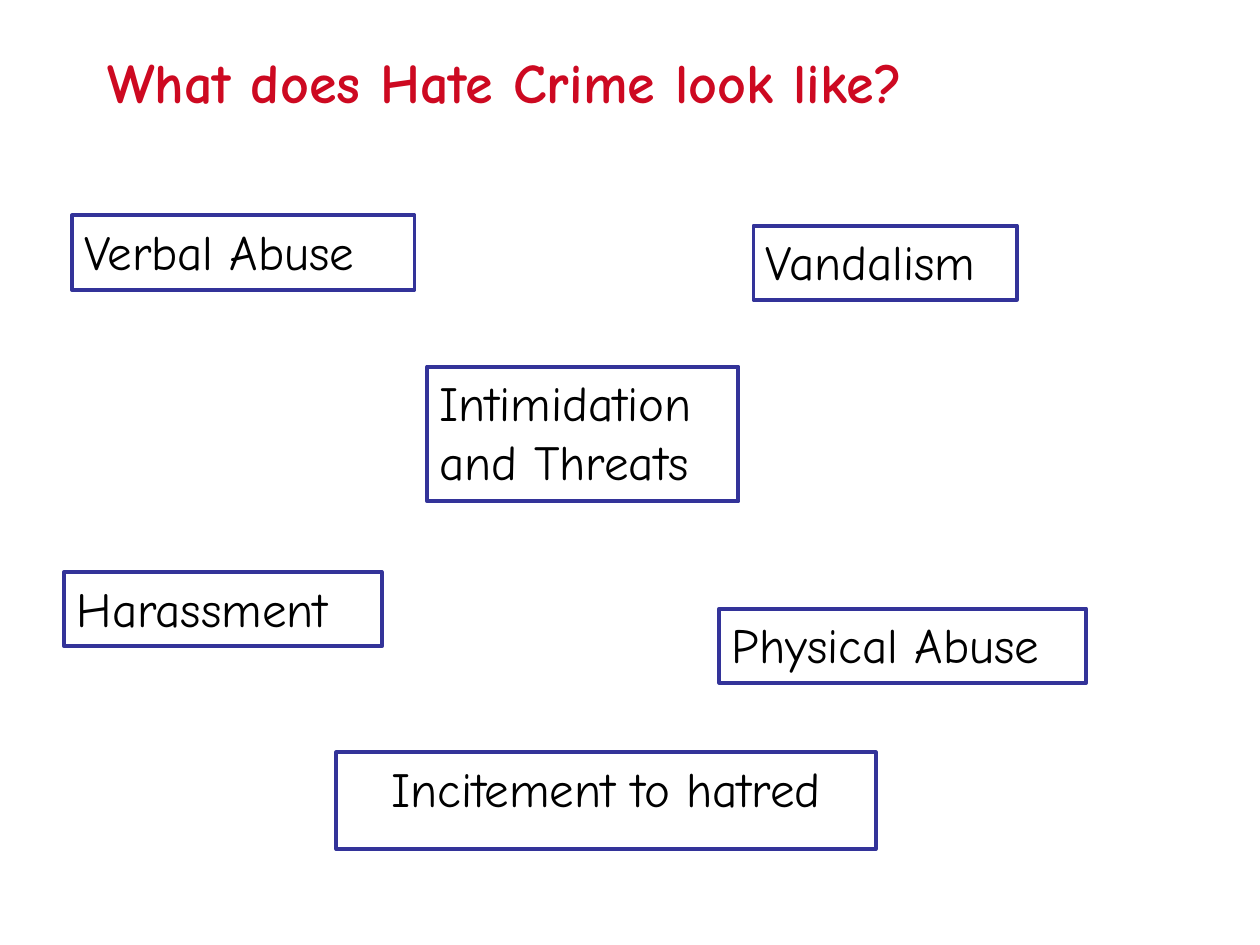
"""Build a slide showing six forms of hate crime in outlined boxes."""
from pptx import Presentation
from pptx.dml.color import RGBColor
from pptx.enum.shapes import MSO_SHAPE as Shape
from pptx.enum.text import MSO_ANCHOR as Anchor, PP_ALIGN as Align
from pptx.util import Inches, Pt

RED = RGBColor(0xCD, 0x09, 0x21)
BLUE = RGBColor(0x33, 0x33, 0x99)
BLACK = RGBColor(0, 0, 0)
COLUMN = ROW = Inches(1)
TITLE_FONT = {"name": "Comic Neue", "size": Pt(32), "bold": True}
BOX_FONT = {"name": "Comic Neue", "size": Pt(28), "bold": False}
LINE_HEIGHT = 0.59


def place(shape, left, top, width, height):
    shape.left, shape.top = int(left * COLUMN), int(top * ROW)
    shape.width, shape.height = int(width * COLUMN), int(height * ROW)


def write(shape, text, font_values, color, align):
    frame = shape.text_frame
    frame.word_wrap = True
    frame.vertical_anchor = Anchor.TOP
    paragraph = frame.paragraphs[0]
    paragraph.alignment = align
    run = paragraph.add_run()
    run.text = text
    for name, value in font_values.items():
        setattr(run.font, name, value)
    run.font.color.rgb = color


presentation = Presentation()
presentation.slide_width = 10 * COLUMN
presentation.slide_height = int(7.5 * ROW)
slide = presentation.slides.add_slide(presentation.slide_layouts[5])

title = slide.shapes.title
place(title, 0.75, 0.33, 8.92, 1.25)
write(title, "What does Hate Crime look like?", TITLE_FONT, RED, Align.LEFT)

crime_forms = [
    ("Vandalism", 5.98, 1.79, 2.09, LINE_HEIGHT, Align.LEFT),
    ("Harassment", 0.51, 4.54, 2.52, LINE_HEIGHT, Align.LEFT),
    ("Physical Abuse", 5.71, 4.83, 2.91, LINE_HEIGHT, Align.LEFT),
    ("Intimidation and Threats", 3.39, 2.91, 2.47, 1.07, Align.LEFT),
    ("Incitement to hatred", 2.67, 5.97, 4.28, 0.77, Align.CENTER),
    ("Verbal Abuse", 0.57, 1.71, 2.72, LINE_HEIGHT, Align.LEFT),
]
for text, left, top, width, height, align in crime_forms:
    box = slide.shapes.add_shape(Shape.RECTANGLE, 0, 0, COLUMN, ROW)
    place(box, left, top, width, height)
    box.shadow.inherit = False
    box.fill.background()
    box.line.color.rgb = BLUE
    box.line.width = Pt(2.25)
    write(box, text, BOX_FONT, BLACK, align)

presentation.save("out.pptx")
